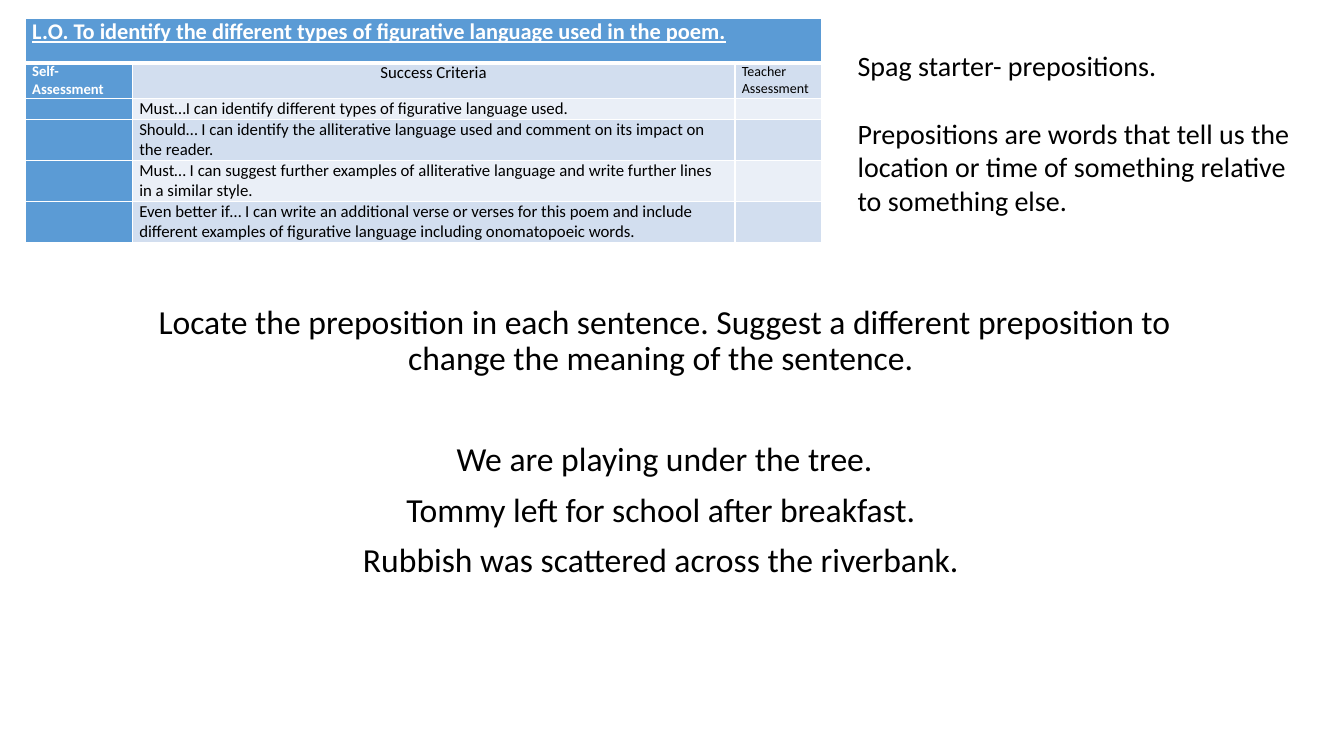
"""Build a lesson slide with a success criteria table and a preposition starter."""
from lxml.etree import SubElement
from pptx import Presentation
from pptx.dml.color import RGBColor
from pptx.enum.text import MSO_ANCHOR, MSO_AUTO_SIZE, PP_ALIGN
from pptx.oxml.ns import qn
from pptx.util import Pt

BLACK = RGBColor(0x00, 0x00, 0x00)
WHITE = RGBColor(0xFF, 0xFF, 0xFF)
BLUE = RGBColor(0x5B, 0x9B, 0xD5)
BAND_DARK = RGBColor(0xD2, 0xDE, 0xEF)
BAND_LIGHT = RGBColor(0xEA, 0xEF, 0xF7)

OBJECTIVE = "L.O. To identify the different types of figurative language used in the poem."
CRITERIA = [
    "Must…I can identify different types of figurative language used.",
    "Should… I can identify the alliterative language used and comment on its impact on the reader.",
    "Must… I can suggest further examples of alliterative language and write further lines in a similar style.",
    "Even better if… I can write an additional verse or verses for this poem and include "
    "different examples of figurative language including onomatopoeic words.",
]
TASK = ("Locate the preposition in each sentence. Suggest a different preposition "
        "to change the meaning of the sentence. ")
SENTENCES = [
    "We are playing under the tree.",
    "Tommy left for school after breakfast. ",
    "Rubbish was scattered across the riverbank. ",
]
DEFINITION = ("Prepositions are words that tell us the location or time of something "
              "relative to something else.")
COLUMN_WIDTHS = [76.5, 430.5, 62]
ROW_HEIGHTS = [32, 25.5, 14.65, 29.3, 29.3, 29.3]


def write(para, text, size=12, color=BLACK, bold=False, underline=False,
          align=PP_ALIGN.LEFT, before=0, line=1.0):
    """Put formatted text in a paragraph, or only set the size of an empty one."""
    para.alignment = align
    para.space_before = Pt(before)
    para.line_spacing = line
    if not text:
        SubElement(para._p, qn("a:endParaRPr"), sz=str(int(size * 100)))
        return
    span = para.add_run()
    span.text = text
    font = span.font
    font.name, font.size, font.bold, font.underline = "Calibri", Pt(size), bold, underline
    font.color.rgb = color


class LessonPage:
    """Holds the current slide and draws its elements."""

    def __init__(self, page):
        """Keep the slide to draw on."""
        self.page = page

    def fill_frame(self, frame, paragraphs):
        """Write (text, format) pairs as the paragraphs of a text frame."""
        frame.word_wrap = True
        frame.auto_size = MSO_AUTO_SIZE.NONE
        frame.vertical_anchor = MSO_ANCHOR.TOP
        for index, (text, style) in enumerate(paragraphs):
            para = frame.add_paragraph() if index else frame.paragraphs[0]
            write(para, text, **style)

    def body(self, left, top, width, height, paragraphs):
        """Place and fill the subtitle, and drop the unused title."""
        title = self.page.shapes.title._element
        title.getparent().remove(title)
        box = self.page.placeholders[1]
        box.left, box.top, box.width, box.height = Pt(left), Pt(top), Pt(width), Pt(height)
        self.fill_frame(box.text_frame, paragraphs)

    def text(self, left, top, width, height, paragraphs):
        """Add a text box."""
        box = self.page.shapes.add_textbox(Pt(left), Pt(top), Pt(width), Pt(height))
        self.fill_frame(box.text_frame, paragraphs)

    def table(self, left, top, widths, heights):
        """Add a table with the given column widths and row heights."""
        frame = self.page.shapes.add_table(len(heights), len(widths), Pt(left), Pt(top),
                                           Pt(sum(widths)), Pt(sum(heights)))
        for column, width in zip(frame.table.columns, widths):
            column.width = Pt(width)
        for row, height in zip(frame.table.rows, heights):
            row.height = Pt(height)
        return frame.table

    def cell(self, cell, text, fill, top_width=1, bottom_width=1, **style):
        """Write, border and fill one table cell."""
        cell.margin_left = cell.margin_right = Pt(5)
        cell.margin_top = cell.margin_bottom = 0
        properties = cell._tc.get_or_add_tcPr()
        for side, width in (("L", 1), ("R", 1), ("T", top_width), ("B", bottom_width)):
            border = SubElement(properties, qn(f"a:ln{side}"), w=str(Pt(width)))
            SubElement(SubElement(border, qn("a:solidFill")), qn("a:srgbClr"), val=str(WHITE))
        cell.fill.solid()
        cell.fill.fore_color.rgb = fill
        write(cell.text_frame.paragraphs[0], text, **style)


def main():
    """Build and save the deck."""
    deck = Presentation()
    deck.slide_width, deck.slide_height = Pt(960), Pt(540)
    lesson = LessonPage(deck.slides.add_slide(deck.slide_layouts[0]))

    centred = dict(size=24, align=PP_ALIGN.CENTER, before=10, line=0.9)
    after_gap = {**centred, "before": 46.4}
    lesson.body(71.5, 214.5, 806.5, 278.5, [
        (TASK, centred),
        (SENTENCES[0], after_gap),
        *((sentence, centred) for sentence in SENTENCES[1:]),
    ])

    grid = lesson.table(18, 13, COLUMN_WIDTHS, ROW_HEIGHTS)
    grid.cell(0, 0).merge(grid.cell(0, 2))
    lesson.cell(grid.cell(0, 0), OBJECTIVE, BLUE, bottom_width=3,
                size=16, color=WHITE, bold=True, underline=True)
    headings = [
        ("Self- Assessment", BLUE, dict(size=10.5, color=WHITE, bold=True)),
        ("Success Criteria", BAND_DARK, dict(align=PP_ALIGN.CENTER)),
        ("Teacher Assessment", BAND_DARK, dict(size=10)),
    ]
    for column, (text, fill, style) in enumerate(headings):
        lesson.cell(grid.cell(1, column), text, fill, top_width=3, **style)
    for row, criterion in enumerate(CRITERIA, start=2):
        band = BAND_DARK if row % 2 else BAND_LIGHT
        for column, (text, fill) in enumerate([("", BLUE), (criterion, band), ("", band)]):
            lesson.cell(grid.cell(row, column), text, fill)

    lesson.text(605.5, 31, 329, 128, [
        ("Spag starter- prepositions.", dict(size=20)),
        (DEFINITION, dict(size=20, before=24.4)),
    ])
    deck.save("out.pptx")


if __name__ == "__main__":
    main()
